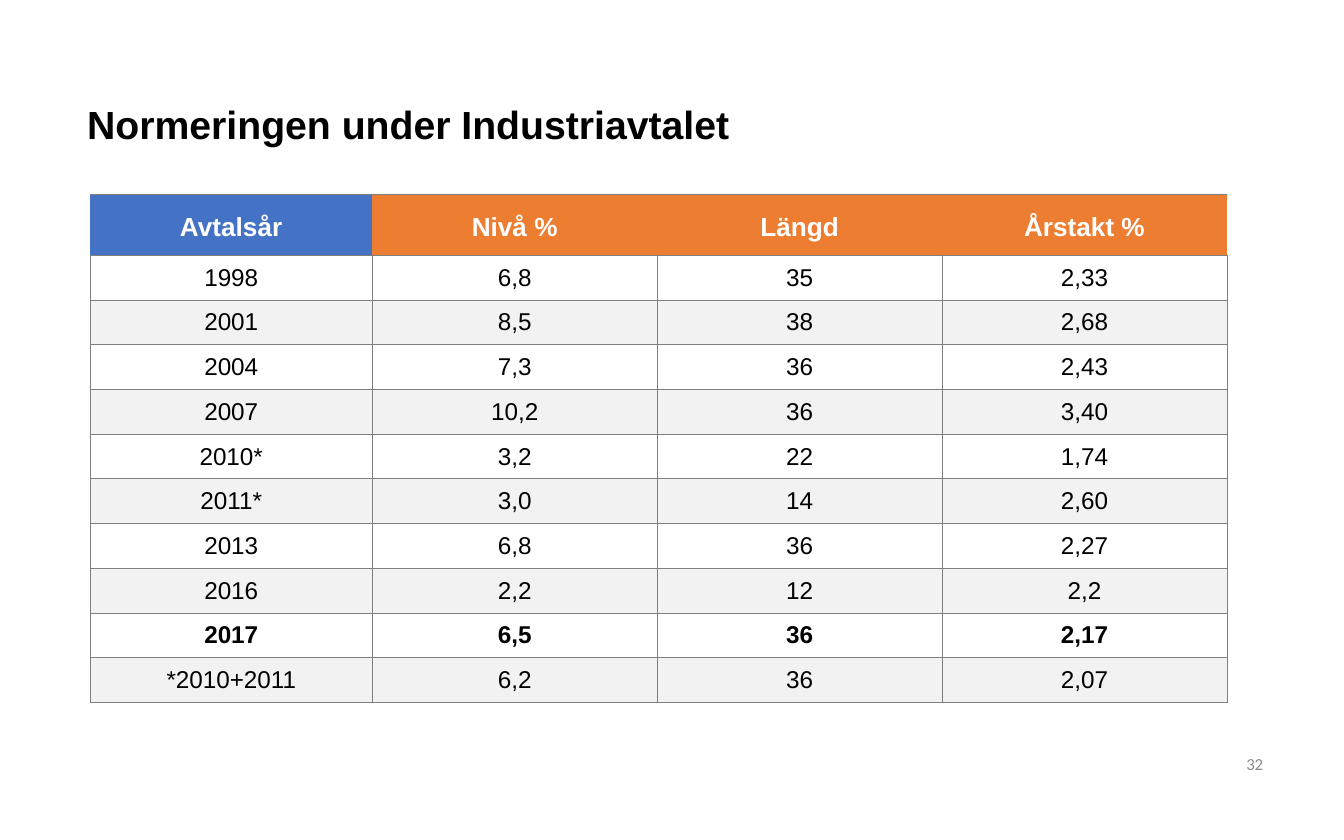
from lxml import etree
from pptx import Presentation
from pptx.dml.color import RGBColor
from pptx.enum import text
from pptx.oxml.ns import qn
from pptx.util import Inches, Pt

# Content
TITLE = "Normeringen under Industriavtalet"
PAGE = "32"
HEADER = ("Avtalsår", "Nivå %", "Längd", "Årstakt %")
ROWS = [
    ("1998", "6,8", "35", "2,33"),
    ("2001", "8,5", "38", "2,68"),
    ("2004", "7,3", "36", "2,43"),
    ("2007", "10,2", "36", "3,40"),
    ("2010*", "3,2", "22", "1,74"),
    ("2011*", "3,0", "14", "2,60"),
    ("2013", "6,8", "36", "2,27"),
    ("2016", "2,2", "12", "2,2"),
    ("2017", "6,5", "36", "2,17"),
    ("*2010+2011", "6,2", "36", "2,07"),
]
BOLD_YEAR = "2017"

THEME = {
    "font": "Arial", "page_font": "Calibri",
    "ink": "000000", "white": "FFFFFF", "muted": "8C8C8C",
    "year": "4472C4", "figures": "ED7D31", "band": "F2F2F2", "rule": "7F7F7F",
    "title": 21, "head": 14, "body": 13, "page": 9, "rule_width": 0.5,
}

# Table grid, in inches
LEFT, TOP = 0.67, 1.45
COLS = (2.1, 2.12, 2.12, 2.12)
HEAD_H, ROW_H = 0.45, 0.333


def write(tf, content, size, color="ink", font="font", bold=False,
          align=text.PP_ALIGN.CENTER, spacing=None):
    p = tf.paragraphs[0]
    p.alignment = align
    if spacing:
        p.line_spacing = spacing
    r = p.add_run()
    r.text = content
    r.font.name = THEME[font]
    r.font.size = Pt(THEME[size])
    r.font.bold = bold
    r.font.color.rgb = RGBColor.from_string(THEME[color])


def add_text(s, box, content, size, anchor=text.MSO_ANCHOR.TOP, **fmt):
    tf = s.shapes.add_textbox(*map(Inches, box)).text_frame
    tf.word_wrap = True
    tf.vertical_anchor = anchor
    write(tf, content, size, **fmt)
    return tf


def set_borders(cell, sides):
    tcPr = cell._tc.get_or_add_tcPr()
    for side in "LRTB":
        ln = etree.SubElement(tcPr, qn("a:ln" + side), w=str(Pt(THEME["rule_width"])))
        if side in sides:
            fill = etree.SubElement(ln, qn("a:solidFill"))
            etree.SubElement(fill, qn("a:srgbClr"), val=THEME["rule"])
        else:
            etree.SubElement(ln, qn("a:noFill"))


def fill_cell(cell, content, fill, sides, margins, anchor, **fmt):
    set_borders(cell, sides)
    if fill:
        cell.fill.solid()
        cell.fill.fore_color.rgb = RGBColor.from_string(THEME[fill])
    else:
        cell.fill.background()
    cell.margin_left = cell.margin_right = Inches(margins[0])
    cell.margin_top = cell.margin_bottom = Inches(margins[1])
    cell.vertical_anchor = anchor
    write(cell.text_frame, content, **fmt)


def add_rates_table(s):
    height = HEAD_H + ROW_H * len(ROWS)
    table = s.shapes.add_table(len(ROWS) + 1, len(COLS), Inches(LEFT), Inches(TOP),
                               Inches(sum(COLS)), Inches(height)).table
    table.first_row = table.horz_banding = False
    for column, width in zip(table.columns, COLS):
        column.width = Inches(width)
    for i, row in enumerate(table.rows):
        row.height = Inches(ROW_H if i else HEAD_H)

    # Header row
    for c, label in enumerate(HEADER):
        fill_cell(table.cell(0, c), label, "figures" if c else "year", "TB",
                  (0.19, 0.1), text.MSO_ANCHOR.BOTTOM,
                  size="head", color="white", bold=True)

    # Body rows, every second one shaded
    for i, values in enumerate(ROWS, 1):
        for c, value in enumerate(values):
            fill_cell(table.cell(i, c), value, None if i % 2 else "band", "LRTB",
                      (0.07, 0.03), text.MSO_ANCHOR.MIDDLE,
                      size="body", bold=values[0] == BOLD_YEAR)


def main():
    prs = Presentation()
    prs.slide_width, prs.slide_height = Inches(10), Inches(6.25)
    s = prs.slides.add_slide(prs.slide_layouts[6])

    # Title
    add_text(s, (0.55, 0.74, 8.84, 0.57), TITLE, "title", bold=True,
             align=text.PP_ALIGN.LEFT, spacing=0.9)

    add_rates_table(s)

    # Page number
    tf = add_text(s, (8.51, 5.53, 0.96, 0.3), PAGE, "page", text.MSO_ANCHOR.MIDDLE,
                  color="muted", font="page_font", align=text.PP_ALIGN.RIGHT)
    tf.margin_left = tf.margin_right = Inches(0.07)
    tf.margin_top = tf.margin_bottom = Inches(0.04)
    tf.paragraphs[0].space_after = Pt(4.5)

    prs.save("out.pptx")


if __name__ == "__main__":
    main()
